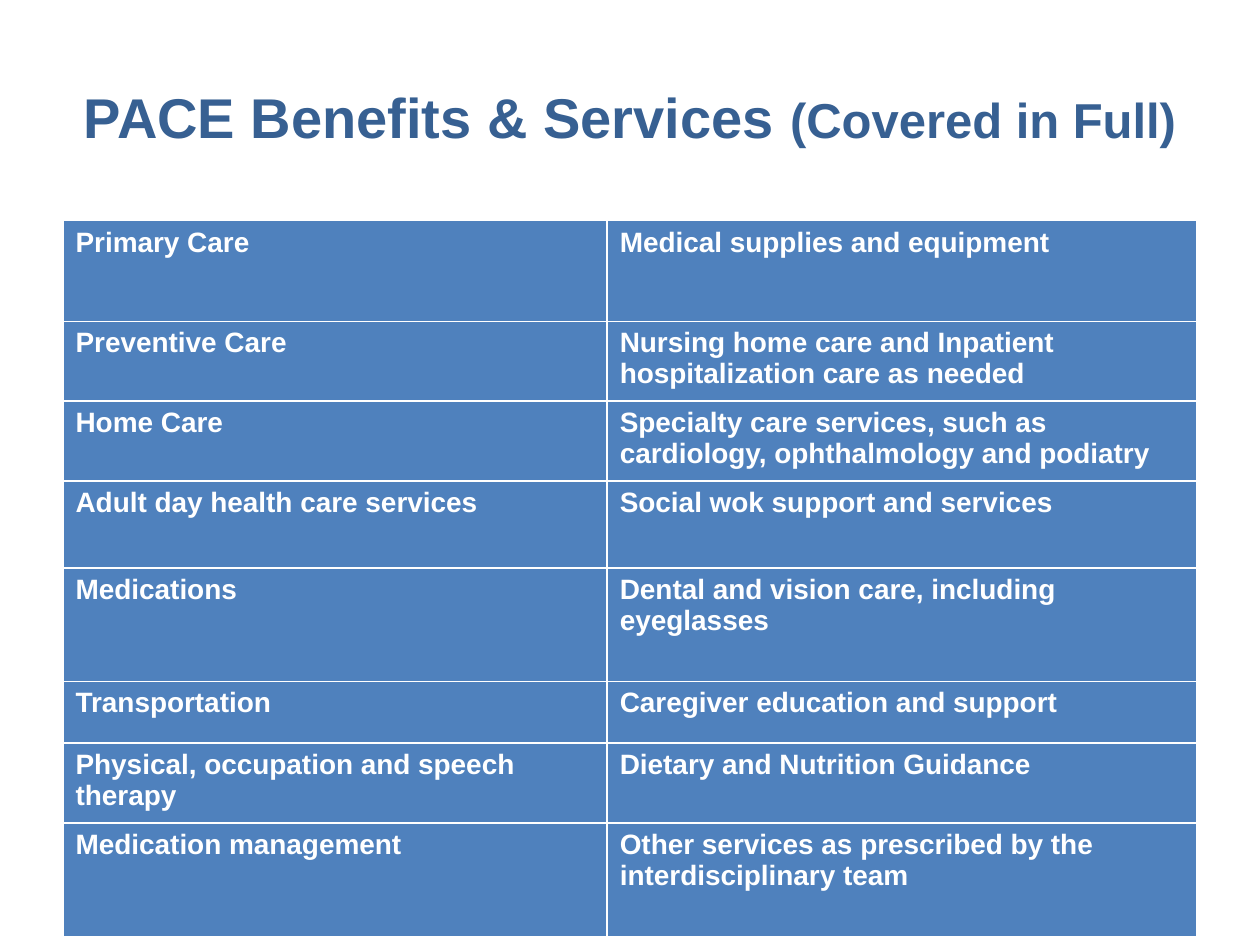
from dataclasses import dataclass

from lxml.etree import SubElement
from pptx import Presentation
from pptx.dml.color import RGBColor as Rgb
from pptx.enum.text import MSO_ANCHOR as Anchor, PP_ALIGN as Align
from pptx.oxml.ns import qn
from pptx.util import Pt

# Content: each service row is (left text, right text, row height)
TITLE = "PACE Benefits & Services "
TITLE_NOTE = "(Covered in Full)"
SERVICES = [
    ("Primary Care", "Medical supplies and equipment", 57.6),
    ("Preventive Care", "Nursing home care and Inpatient hospitalization care as needed", 45.5),
    ("Home Care", "Specialty care services, such as cardiology, ophthalmology and podiatry", 45.5),
    ("Adult day health care services", "Social wok support and services", 49.7),
    ("Medications", "Dental and vision care, including eyeglasses", 64.8),
    ("Transportation", "Caregiver education and support", 35.4),
    ("Physical, occupation and speech therapy", "Dietary and Nutrition Guidance", 45.5),
    ("Medication management", "Other services as prescribed by the interdisciplinary team", 64.8),
]
COLUMN_WIDTHS = (311, 337)
MARGIN, TITLE_TOP, TITLE_HEIGHT, TABLE_TOP = 36, 21.6, 90, 126


@dataclass(frozen=True)
class Theme:
    font: str = "Arial"
    title_color: str = "376092"
    cell_fill: str = "4F81BD"
    light: str = "FFFFFF"
    title_size: int = 32
    note_size: int = 28
    cell_size: int = 16
    border: int = 1


THEME = Theme()


def add_text(para, text, *, size, color, bold=True):
    span = para.add_run()
    span.text = text
    span.font.name = THEME.font
    span.font.size = Pt(size)
    span.font.bold = bold
    span.font.color.rgb = Rgb.from_string(color)


def style_cell(cell):
    # Borders come before the fill in the cell properties
    properties = cell._tc.get_or_add_tcPr()
    for side in ("a:lnL", "a:lnR", "a:lnT", "a:lnB"):
        line = SubElement(properties, qn(side), w=str(Pt(THEME.border)))
        fill = SubElement(line, qn("a:solidFill"))
        SubElement(fill, qn("a:srgbClr"), val=THEME.light)
    cell.fill.solid()
    cell.fill.fore_color.rgb = Rgb.from_string(THEME.cell_fill)
    cell.margin_left = cell.margin_right = Pt(7.2)
    cell.margin_top = cell.margin_bottom = Pt(3.6)


def main():
    deck = Presentation()
    deck.slide_width, deck.slide_height = Pt(720), Pt(540)
    page = deck.slides.add_slide(deck.slide_layouts[6])
    width = sum(COLUMN_WIDTHS)

    # Title
    box = page.shapes.add_textbox(Pt(MARGIN), Pt(TITLE_TOP), Pt(width), Pt(TITLE_HEIGHT))
    frame = box.text_frame
    frame.word_wrap = True
    frame.vertical_anchor = Anchor.MIDDLE
    para = frame.paragraphs[0]
    para.alignment = Align.CENTER
    add_text(para, TITLE, size=THEME.title_size, color=THEME.title_color)
    add_text(para, TITLE_NOTE, size=THEME.note_size, color=THEME.title_color)

    # Services table
    height = sum(row[-1] for row in SERVICES)
    table = page.shapes.add_table(
        len(SERVICES), len(COLUMN_WIDTHS), Pt(MARGIN), Pt(TABLE_TOP), Pt(width), Pt(height)
    ).table
    for column, column_width in zip(table.columns, COLUMN_WIDTHS):
        column.width = Pt(column_width)
    for row, (*texts, row_height) in zip(table.rows, SERVICES):
        row.height = Pt(row_height)
        for cell, text in zip(row.cells, texts):
            style_cell(cell)
            add_text(cell.text_frame.paragraphs[0], text, size=THEME.cell_size, color=THEME.light)

    deck.save("out.pptx")


if __name__ == "__main__":
    main()
